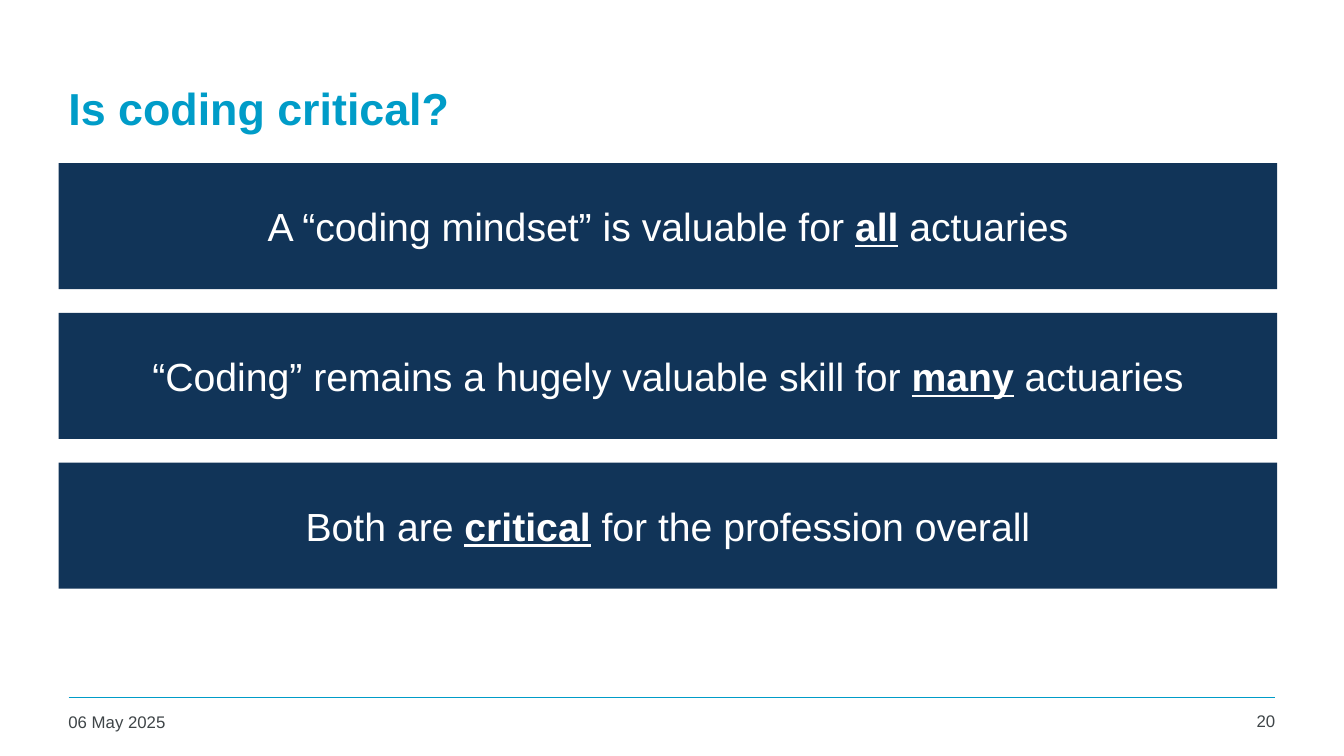
from dataclasses import dataclass

from lxml.etree import SubElement
from pptx import Presentation
from pptx.dml.color import RGBColor as Rgb
from pptx.enum.shapes import MSO_CONNECTOR as Conn, MSO_SHAPE as Form
from pptx.enum.text import MSO_ANCHOR as Anchor, PP_ALIGN as Align
from pptx.oxml.ns import qn
from pptx.slide import Slide
from pptx.text.text import TextFrame as Frame
from pptx.util import Pt

CYAN, NAVY, GREY, WHITE = "009CC8", "113458", "3F4548", "FFFFFF"
LEFT, WIDE, HIGH = 41.8, 870.5, 90
TOP, STEP = 116.6, 106.9


@dataclass
class Label:
    text: str
    box: tuple[float, float, float, float]
    size: float
    tint: str
    bold: bool = False
    align: Align = Align.LEFT
    anchor: Anchor = Anchor.TOP


@dataclass
class Banner:
    lead: str
    key: str
    tail: str


LABELS = [
    Label("Is coding critical?", (LEFT, 31.7, WIDE, HIGH), 32, CYAN,
          bold=True, anchor=Anchor.MIDDLE),
    Label("06 May 2025", (LEFT, 504.7, 211.7, 25.9), 12, GREY),
    Label("20", (850.3, 504, 67.7, 26.6), 12, GREY, align=Align.RIGHT),
]
BANNERS = [
    Banner("A “coding mindset” is valuable for ", "all", " actuaries"),
    Banner("“Coding” remains a hugely valuable skill for ", "many", " actuaries"),
    Banner("Both are ", "critical", " for the profession overall"),
]


def color(code: str) -> Rgb:
    return Rgb.from_string(code)


def write(frame: Frame, parts: list[tuple[str, dict]], size: float, tint: str,
          align: Align, anchor: Anchor) -> None:
    frame.word_wrap = True
    frame.vertical_anchor = anchor
    para = frame.paragraphs[0]
    para.alignment = align
    for text, style in parts:
        run = para.add_run()
        run.text = text
        look = {"name": "Arial", "size": Pt(size), **style}
        for name, value in look.items():
            setattr(run.font, name, value)
        run.font.color.rgb = color(tint)


def draw_label(slide: Slide, label: Label) -> None:
    box = slide.shapes.add_textbox(*map(Pt, label.box))
    write(box.text_frame, [(label.text, {"bold": label.bold})],
          label.size, label.tint, label.align, label.anchor)


def draw_banner(slide: Slide, banner: Banner, top: float) -> None:
    bar = slide.shapes.add_shape(Form.RECTANGLE, Pt(LEFT), Pt(top), Pt(WIDE), Pt(HIGH))
    bar.shadow.inherit = False
    bar.fill.solid()
    bar.fill.fore_color.rgb = color(NAVY)
    bar.line.fill.background()
    parts = [(banner.lead, {}), (banner.key, {"bold": True, "underline": True}),
             (banner.tail, {})]
    write(bar.text_frame, parts, 28, WHITE, Align.CENTER, Anchor.MIDDLE)


def draw_rule(slide: Slide) -> None:
    rule = slide.shapes.add_connector(Conn.STRAIGHT, Pt(49), Pt(498.2), Pt(910.8), Pt(498.2))
    rule.line.color.rgb = color(CYAN)
    rule.line.width = Pt(1)
    SubElement(rule._element.spPr, qn("a:effectLst"))


def main() -> None:
    deck = Presentation()
    deck.slide_width, deck.slide_height = Pt(960), Pt(540)
    slide = deck.slides.add_slide(deck.slide_layouts[6])

    # Footer rule, title, date and page number
    draw_rule(slide)
    for label in LABELS:
        draw_label(slide, label)

    # Evenly spaced banners
    for row, banner in enumerate(BANNERS):
        draw_banner(slide, banner, TOP + row * STEP)

    deck.save("out.pptx")


if __name__ == "__main__":
    main()
